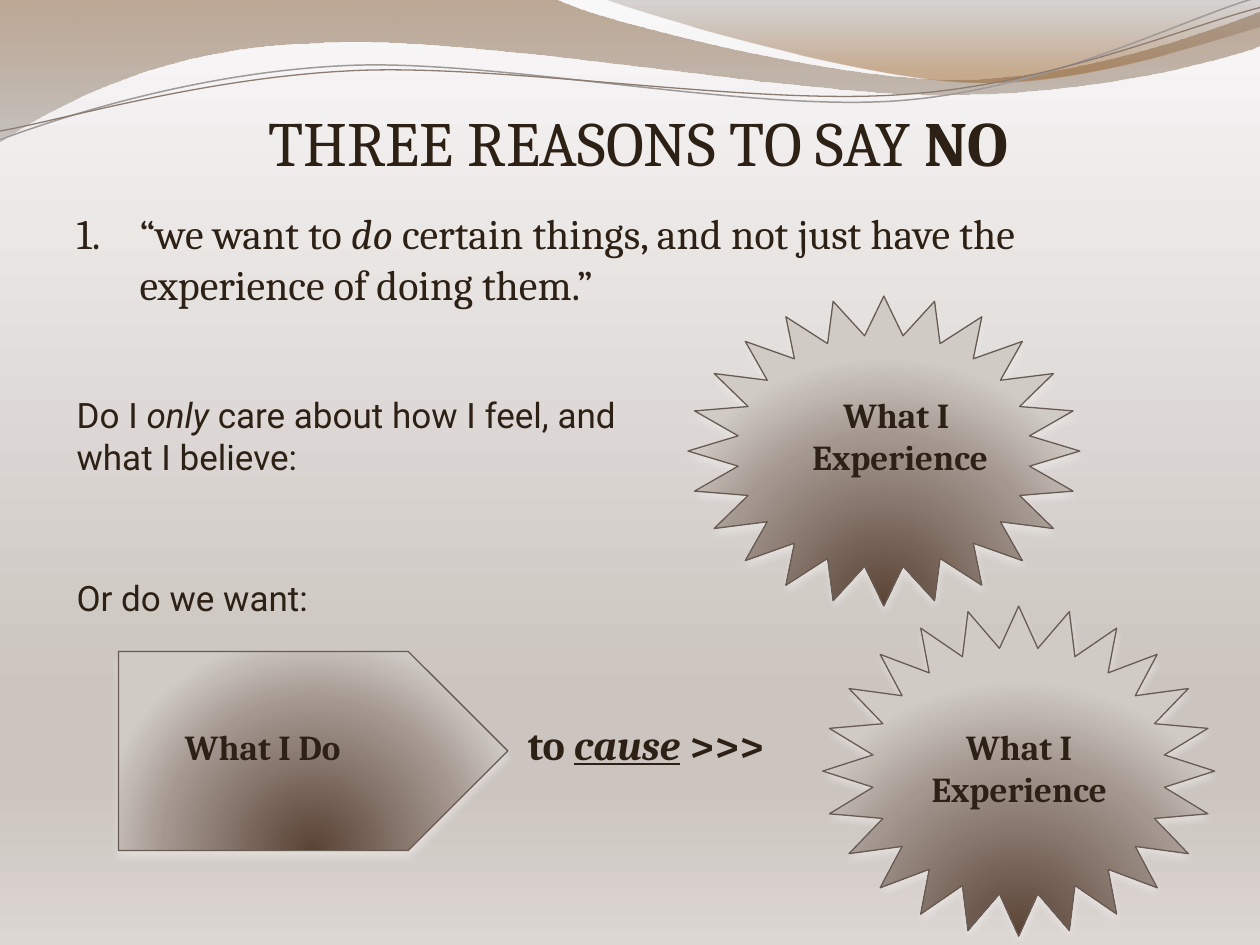
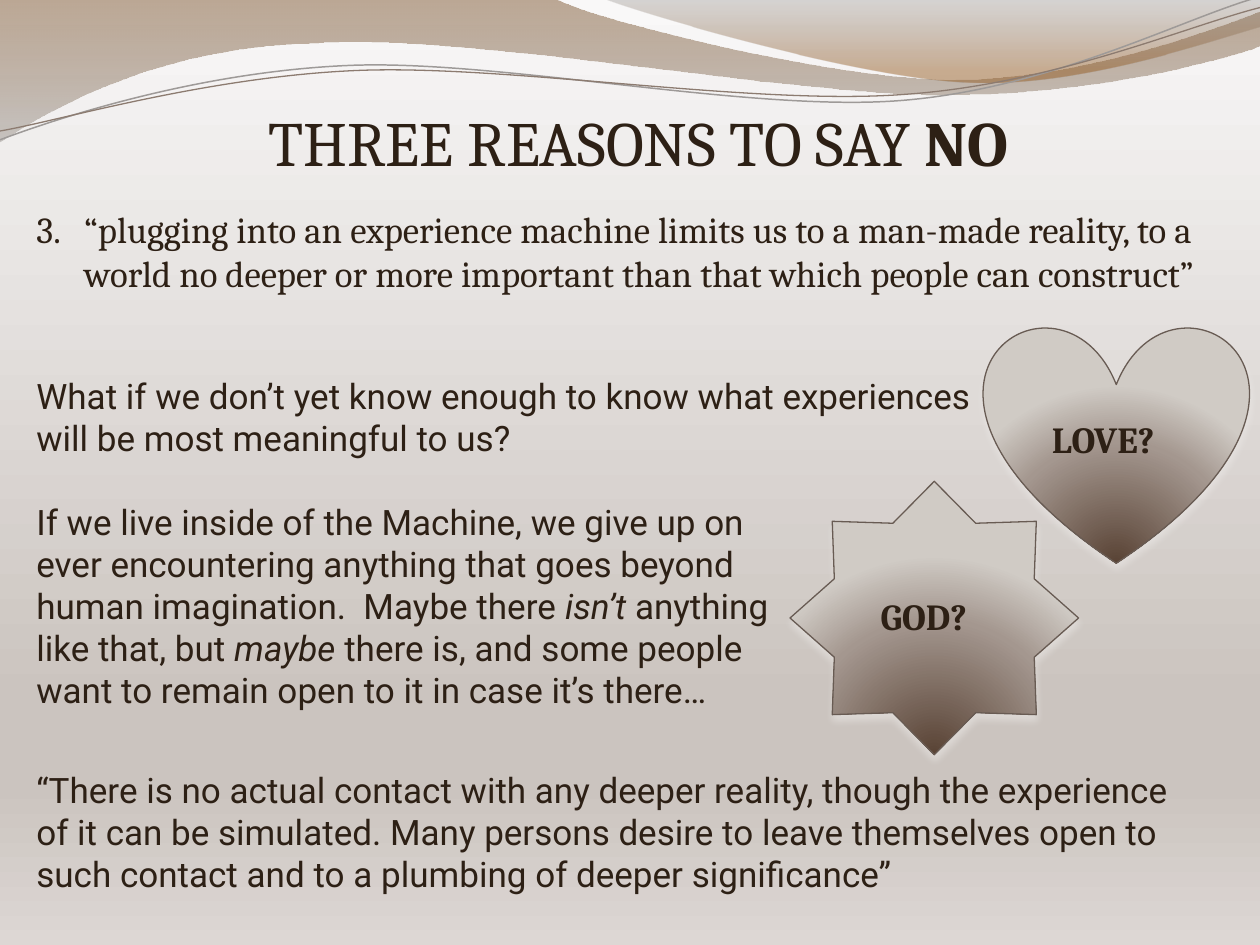
from lxml import etree
from pptx import Presentation
from pptx.dml.color import RGBColor
from pptx.enum.shapes import MSO_SHAPE as Preset
from pptx.enum.text import MSO_AUTO_SIZE as AutoSize, PP_ALIGN as Align
from pptx.oxml.ns import qn
from pptx.util import Inches, Pt

COLORS = {
    "text": "2D2015", "outline": "685B53", "shadow": "F3F1EF",
    "mist": "F9F8F8", "stone": "CBC4BF", "sand": "DDD7D4",
    "brown": "71461C", "ash": "A49F9A", "olive": "85817E", "copper": "8F5419",
    "gray_curve": "9E9A98", "brown_curve": "8C7B70",
    "core": "594335", "middle": "A4978F", "rim": "D0CBC5",
}
SERIF, SANS = "Cambria", "Roboto"
PLAIN, BOLD, ITALIC = {}, {"bold": True}, {"italic": True}
BOLD_CAUSE = {"bold": True, "italic": True, "underline": True}


def set_gradient(fill, element, stops, radial=False):
    fill.gradient()
    gradient = next(element.iter(qn("a:gradFill")))
    for child in list(gradient):
        gradient.remove(child)
    stop_list = etree.SubElement(gradient, qn("a:gsLst"))
    for position, color, opacity in stops:
        stop = etree.SubElement(stop_list, qn("a:gs"), pos=str(position * 1000))
        tint = etree.SubElement(stop, qn("a:srgbClr"), val=COLORS[color])
        if opacity < 100:
            etree.SubElement(tint, qn("a:alpha"), val=str(opacity * 1000))
    if radial:
        circle = etree.SubElement(gradient, qn("a:path"), path="circle")
        etree.SubElement(circle, qn("a:fillToRect"), l="50000", t="130000", r="50000", b="-30000")
    else:
        etree.SubElement(gradient, qn("a:lin"), ang="5400000", scaled="0")


def add_text(page, at, size, face, *lines, align=Align.LEFT, after=0, number=None, indent=0, wrap=True):
    box = page.shapes.add_textbox(*map(Inches, at))
    frame = box.text_frame
    frame.word_wrap = wrap
    frame.auto_size = AutoSize.SHAPE_TO_FIT_TEXT
    for order, runs in enumerate(lines):
        para = frame.add_paragraph() if order else frame.paragraphs[0]
        para.alignment = align
        para.space_after = Pt(after)
        if number:
            props = para._p.get_or_add_pPr()
            props.set("marL", str(Inches(indent)))
            props.set("indent", str(-Inches(indent)))
            etree.SubElement(props, qn("a:buAutoNum"), type="arabicPeriod", startAt=str(number))
        for words, style in runs:
            span = para.add_run()
            span.text = words
            span.font.color.rgb = RGBColor.from_string(COLORS["text"])
            for name, value in {"name": face, "size": Pt(size), **style}.items():
                setattr(span.font, name, value)


deck = Presentation()
deck.slide_width, deck.slide_height = Inches(10), Inches(7.5)
master = deck.slide_master
set_gradient(master.background.fill, master.element,
             [(0, "mist", 100), (74, "stone", 100), (83, "stone", 100), (100, "sand", 100)])
blank = deck.slide_layouts[6]
for holder in list(blank.placeholders):
    blank.shapes.element.remove(holder.element)
pages = [deck.slides.add_slide(blank) for _ in range(2)]

waves = [
    {"start": (0, 0), "stops": [(0, "brown", 45), (100, "ash", 55)], "steps": [
        (4.4, -0.01), (4.76, 0.17, 6.64, 0.63, 7.58, 0.63), (8.53, 0.63, 9.58, 0.26, 10, 0.09),
        (10.01, 0.36), (9.83, 0.44, 8.7, 0.76, 7.46, 0.75), (6.22, 0.75, 3.82, 0.28, 2.57, 0.34),
        (1.29, 0.36, 0.46, 0.83, -0.01, 1.13)]},
    {"start": (4.79, -0.01), "stops": [(0, "olive", 30), (80, "copper", 45)], "steps": [
        (5.09, 0.11, 6.82, 0.62, 7.69, 0.65), (8.56, 0.69, 9.61, 0.32, 10, 0.21), (10, 0)]},
    {"start": (0, 1.11), "line": ("gray_curve", 0.85), "steps": [
        (0.48, 0.93, 1.58, 0.57, 2.77, 0.52), (3.95, 0.47, 5.93, 0.89, 7.13, 0.8),
        (8.33, 0.71, 9.38, 0.15, 9.98, -0.02)]},
    {"start": (0, 1.04), "line": ("brown_curve", 0.75), "steps": [
        (0.47, 0.96, 1.64, 0.61, 2.83, 0.56), (4.03, 0.51, 5.97, 0.84, 7.17, 0.75),
        (8.36, 0.67, 9.41, 0.21, 10, 0.06)]},
]
for wave in waves:
    corners = [(Inches(step[i]), Inches(step[i + 1]))
               for step in wave["steps"] for i in range(0, len(step), 2)]
    builder = pages[0].shapes.build_freeform(*map(Inches, wave["start"]))
    builder.add_line_segments(corners, close="stops" in wave)
    ribbon = builder.convert_to_shape()
    segments = ribbon._element.iter(qn("a:lnTo"))
    segments = iter(list(segments))
    for step in wave["steps"]:
        segment = next(segments)
        if len(step) == 6:
            curve = etree.Element(qn("a:cubicBezTo"))
            segment.addprevious(curve)
            for control in (segment, next(segments), next(segments)):
                curve.append(control[0])
                control.getparent().remove(control)
    ribbon.shadow.inherit = False
    if "stops" in wave:
        set_gradient(ribbon.fill, ribbon._element, wave["stops"])
        ribbon.line.fill.background()
    else:
        color, width = wave["line"]
        ribbon.fill.background()
        ribbon.line.color.rgb = RGBColor.from_string(COLORS[color])
        ribbon.line.width = Pt(width)
    blank.shapes.element.append(ribbon._element)

badges = [
    (0, Preset.STAR_24_POINT, (5.46, 2.35, 3.11, 2.46)),
    (0, Preset.STAR_24_POINT, (6.53, 4.81, 3.11, 2.62)),
    (0, Preset.PENTAGON, (0.94, 5.17, 3.09, 1.58)),
    (1, Preset.HEART, (7.81, 2.58, 2.1, 1.89)),
    (1, Preset.STAR_8_POINT, (6.27, 3.82, 2.29, 2.17)),
]
for index, preset, at in badges:
    badge = pages[index].shapes.add_shape(preset, *map(Inches, at))
    set_gradient(badge.fill, badge._element,
                 [(0, "core", 100), (68, "middle", 100), (100, "rim", 100)], radial=True)
    badge.line.color.rgb = RGBColor.from_string(COLORS["outline"])
    badge.line.width = Pt(0.75)
    badge.shadow.inherit = False
    effects = next(badge._element.iter(qn("a:effectLst")))
    shade = etree.SubElement(effects, qn("a:outerShdw"), blurRad=str(Pt(4.5)), dist=str(Pt(3)),
                             dir="5400000", rotWithShape="0")
    tint = etree.SubElement(shade, qn("a:srgbClr"), val=COLORS["shadow"])
    etree.SubElement(tint, qn("a:alpha"), val="48000")

for page in pages:
    add_text(page, (0.94, 0.77, 8.25, 0.71), 36, SERIF,
             [("THREE REASONS TO SAY ", PLAIN), ("NO", BOLD)], align=Align.CENTER)

action, limits = pages
add_text(action, (0.51, 1.6, 9.16, 0.91), 24, SERIF, [
    ("“we want to ", PLAIN), ("do", ITALIC),
    (" certain things, and not just have the experience of doing them.”", PLAIN),
], number=1, indent=0.5)
add_text(action, (0.51, 3.07, 4.72, 0.77), 20, SANS, [
    ("Do I ", PLAIN), ("only", ITALIC), (" care about how I feel, and what I believe:", PLAIN)])
add_text(action, (0.51, 4.53, 9.16, 0.44), 20, SANS, [("Or do we want:", PLAIN)], after=6)
add_text(action, (6.31, 3.07, 1.67, 0.77), 20, SERIF, [("What I ", BOLD)], [("Experience", BOLD)],
         align=Align.CENTER, wrap=False)
add_text(action, (1.37, 5.71, 2.06, 0.44), 20, SERIF, [("What I Do", BOLD)])
add_text(action, (4.09, 5.65, 2.28, 0.5), 24, SERIF,
         [("to ", BOLD), ("cause", BOLD_CAUSE), (" >>>", BOLD)])
add_text(action, (7.16, 5.71, 1.86, 0.77), 20, SERIF, [("What I Experience", BOLD)],
         align=Align.CENTER)

add_text(limits, (0.19, 1.59, 9.81, 1.16), 21, SERIF, [
    ("“plugging into an experience machine limits us to a man-made reality, to a world "
     "no deeper or more important than that which people can construct”", PLAIN),
], number=3, indent=0.38)
add_text(limits, (0.19, 6.05, 9.36, 1.11), 20, SANS, [
    ("“There is no actual contact with any deeper reality, though the experience of it can be "
     "simulated. Many persons desire to leave themselves open to such contact and to a plumbing "
     "of deeper significance”", PLAIN)], after=6)
add_text(limits, (0.19, 2.92, 7.62, 0.77), 20, SANS, [
    ("What if we don’t yet know enough to know what experiences will be most meaningful to us?", PLAIN)])
add_text(limits, (0.19, 3.92, 6.27, 1.78), 20, SANS, [
    ("If we live inside of the Machine, we give up on ever encountering anything that goes "
     "beyond human imagination.  Maybe there ", PLAIN),
    ("isn’t", ITALIC), (" anything like that, but ", PLAIN), ("maybe", ITALIC),
    (" there is, and some people want to remain open to it in case it’s there…", PLAIN)])
add_text(limits, (8.25, 3.26, 1.13, 0.45), 21, SERIF, [("LOVE?", BOLD)])
add_text(limits, (6.89, 4.66, 1.05, 0.45), 21, SERIF, [("GOD?", BOLD)])

deck.save("out.pptx")
